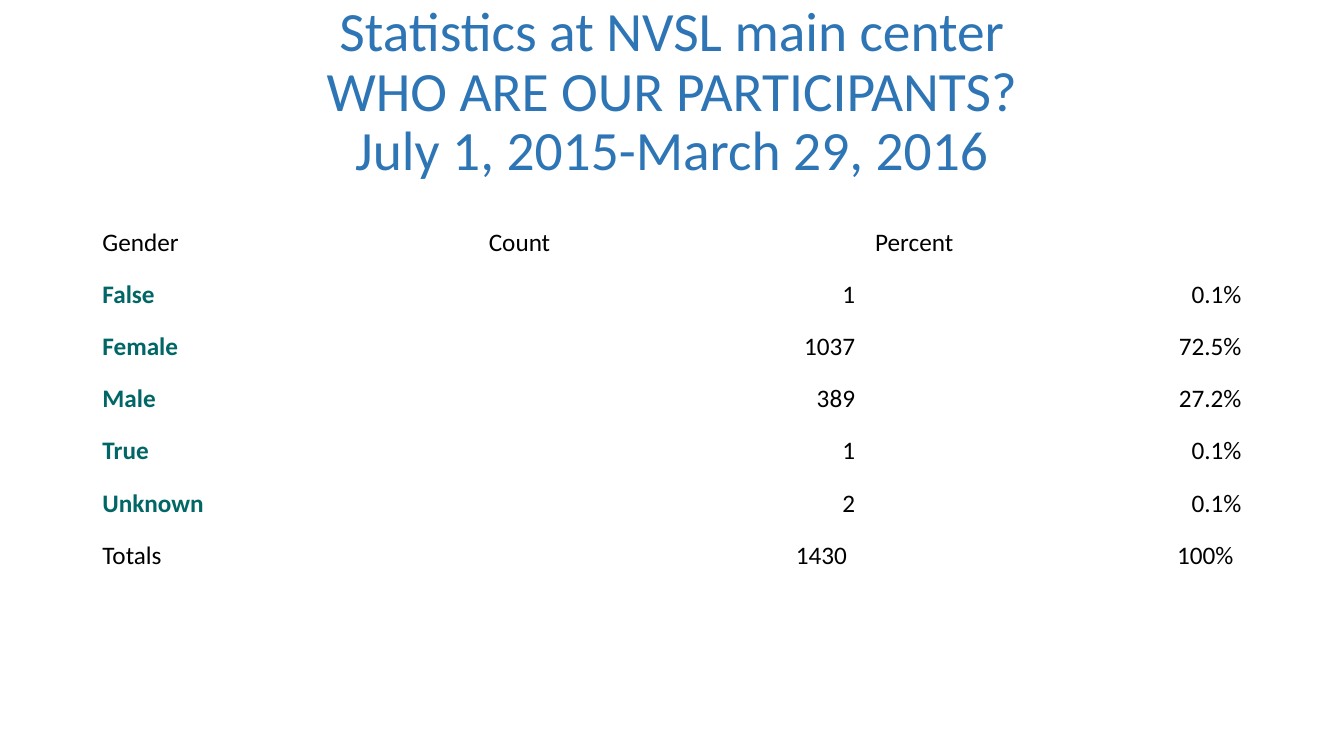
from pptx import Presentation
from pptx.dml.color import RGBColor
from pptx.enum import text
from pptx.util import Pt

COLORS = {"heading": "2E75B6", "gender": "006666", "body": "000000"}
FONT = "Calibri"
HEADING = ["Statistics at NVSL main center", "WHO ARE OUR PARTICIPANTS?",
           "July 1, 2015-March 29, 2016"]
GENDER_ROWS = [
    ("Gender", "Count", "Percent"),
    ("False", "1", "0.1%"),
    ("Female", "1037", "72.5%"),
    ("Male", "389", "27.2%"),
    ("True", "1", "0.1%"),
    ("Unknown", "2", "0.1%"),
    ("Totals", "1430", "100%"),
]


def style(paragraph, size, color, bold=False):
    """Set the font of a whole paragraph."""
    font = paragraph.font
    font.name, font.size, font.bold = FONT, Pt(size), bold
    font.color.rgb = RGBColor.from_string(COLORS[color])


def place_heading(slide, left, top, width, height):
    """Fill the title placeholder with the three-line heading."""
    heading = slide.shapes.title
    heading.left, heading.top = Pt(left), Pt(top)
    heading.width, heading.height = Pt(width), Pt(height)
    frame = heading.text_frame
    frame.text = "\v".join(HEADING)
    frame.auto_size = text.MSO_AUTO_SIZE.NONE
    frame.vertical_anchor = text.MSO_ANCHOR.MIDDLE
    line = frame.paragraphs[0]
    line.alignment = text.PP_ALIGN.CENTER
    line.line_spacing = 0.9
    style(line, 39.6, "heading")


def place_genders(slide, left, top, width, height):
    """Draw the plain table of participants by gender."""
    last = len(GENDER_ROWS) - 1
    genders = slide.shapes.add_table(
        len(GENDER_ROWS), len(GENDER_ROWS[0]),
        Pt(left), Pt(top), Pt(width), Pt(height)).table
    genders.first_row = genders.horz_banding = False
    for r, values in enumerate(GENDER_ROWS):
        for c, value in enumerate(values):
            cell = genders.cell(r, c)
            cell.fill.background()
            cell.vertical_anchor = text.MSO_ANCHOR.MIDDLE
            cell.text = value
            entry = cell.text_frame.paragraphs[0]
            is_gender = c == 0 and 0 < r < last
            style(entry, 18, "gender" if is_gender else "body", is_gender)
            if r > 0 and c > 0:
                entry.alignment = text.PP_ALIGN.RIGHT
                if r == last:
                    cell.margin_right = Pt(13)


def main():
    """Build and save the participants slide."""
    deck = Presentation()
    deck.slide_width, deck.slide_height = Pt(960), Pt(540)
    slide = deck.slides.add_slide(deck.slide_layouts[5])
    place_heading(slide, 66, 0, 828, 133)
    place_genders(slide, 66, 155, 828, 260.4)
    deck.save("out.pptx")


if __name__ == "__main__":
    main()
